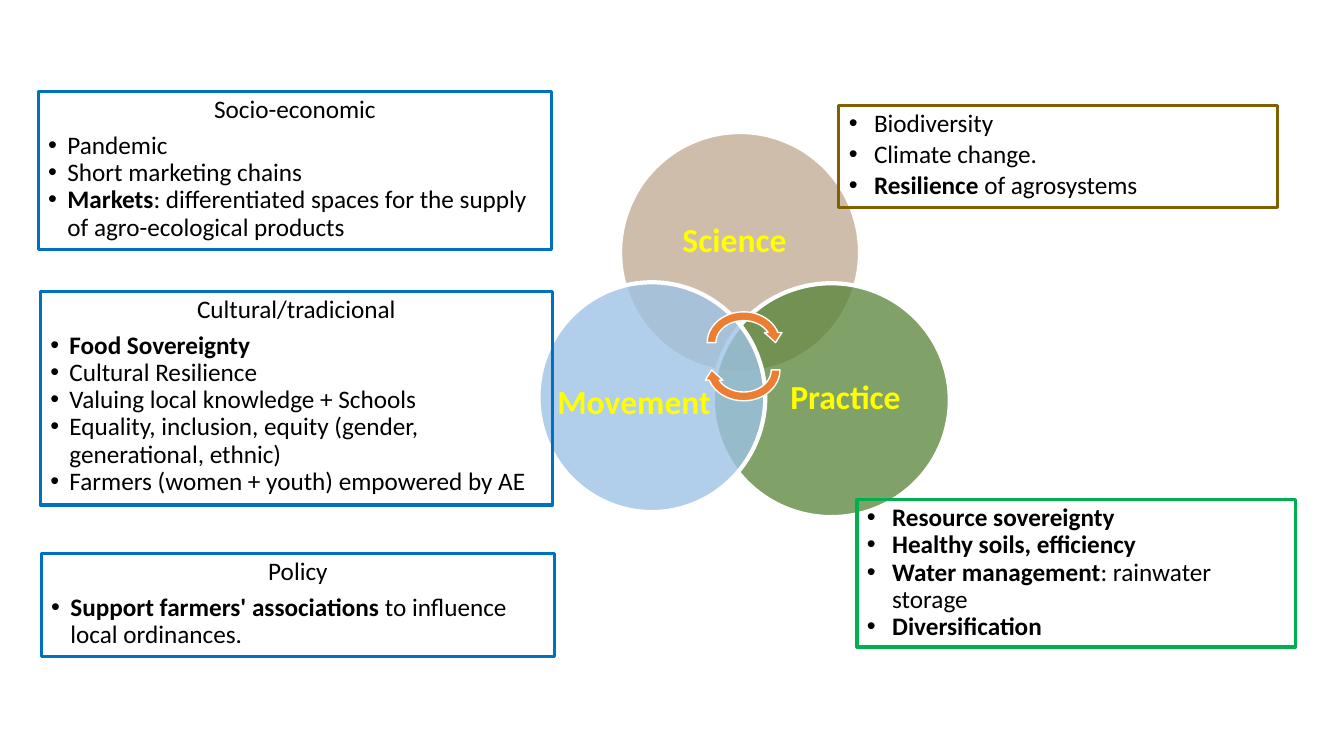
import pptx
import pptx.util
import pptx.dml.color
import pptx.enum.shapes
import pptx.enum.text
import pptx.oxml
import pptx.oxml.ns
import lxml.etree

Inches = pptx.util.Inches
Pt = pptx.util.Pt
SHAPES = pptx.enum.shapes.MSO_SHAPE
FIT = pptx.enum.text.MSO_AUTO_SIZE.SHAPE_TO_FIT_TEXT

# Content
COLOURS = {
    "science": "A2825E", "practice": "548235", "movement": "9DC3E6",
    "label": "FFFF00", "outline": "FFFFFF", "arrow": "ED7D31", "text": "000000",
    "society": "0070C0", "soils": "00B050", "nature": "806000",
}

# Circle: label, colour, opacity in percent, circle place, label place
CIRCLES = [
    ("Science", "science", 52, (6.15, 1.31, 2.38, 2.39), (6.67, 2.12, 1.25, 0.5)),
    ("Practice", "practice", 74, (7.07, 2.81, 2.35, 2.32), (7.74, 3.68, 1.31, 0.5)),
    ("Movement", "movement", 79, (5.34, 2.8, 2.25, 2.28), (5.43, 3.73, 1.74, 0.5)),
]
CYCLE_ARROWS = [((6.97, 3.05, 0.81, 0.7), 0), ((6.97, 3.32, 0.81, 0.7), 180)]

# Panels: each bullet is a list of (words, bold)
PANELS = [
    {"place": (0.38, 0.91, 5.09, 1.57), "colour": "society", "indent": 0.19, "after": 0,
     "heading": "Socio-economic",
     "bullets": [
         [("Pandemic", False)],
         [("Short marketing chains", False)],
         [("Markets", True),
          (": differentiated spaces for the supply of agro-ecological products", False)]]},
    {"place": (0.4, 2.89, 5.08, 2.12), "colour": "society", "indent": 0.19, "after": 0,
     "heading": "Cultural/tradicional",
     "bullets": [
         [("Food Sovereignty", True)],
         [("Cultural Resilience", False)],
         [("Valuing local knowledge + Schools", False)],
         [("Equality, inclusion, equity (gender, generational, ethnic)", False)],
         [("Farmers (women + youth) empowered by AE", False)]]},
    {"place": (0.41, 5.49, 5.09, 1.02), "colour": "society", "indent": 0.19, "after": 0,
     "heading": "Policy",
     "bullets": [
         [("Support farmers' associations ", True),
          ("to influence local ordinances.", False)]]},
    {"place": (8.5, 4.96, 4.35, 1.46), "colour": "soils", "indent": 0.25, "after": 0,
     "heading": None,
     "bullets": [
         [("Resource sovereignty", True)],
         [("Healthy soils, efficiency", True)],
         [("Water management", True), (": rainwater storage", False)],
         [("Diversification", True)]]},
    {"place": (8.32, 1.05, 4.35, 1.01), "colour": "nature", "indent": 0.25, "after": 2.7,
     "heading": None,
     "bullets": [
         [("Biodiversity", False)],
         [("Climate change.", False)],
         [("Resilience ", True), ("of agrosystems", False)]]},
]
HEADING_AFTER = 6.3


def rgb(name):
    return pptx.dml.color.RGBColor.from_string(COLOURS[name])


def apply(target, values):
    for name, value in values.items():
        setattr(target, name, value)


def outline(part, colour, width):
    part.line.color.rgb = rgb(colour)
    part.line.width = Pt(width)


def add_words(paragraph, words, size, colour, bold):
    run = paragraph.add_run()
    run.text = words
    apply(run.font, {"name": "Calibri", "size": Pt(size), "bold": bold})
    run.font.color.rgb = rgb(colour)


def add_solid(shapes, kind, place, colour, width):
    solid = shapes.add_shape(kind, *map(Inches, place))
    solid.shadow.inherit = False
    solid.fill.solid()
    solid.fill.fore_color.rgb = rgb(colour)
    outline(solid, "outline", width)
    return solid


def set_opacity(solid, percent):
    colour = solid.fill._xPr.find(".//" + pptx.oxml.ns.qn("a:srgbClr"))
    alpha = lxml.etree.SubElement(colour, pptx.oxml.ns.qn("a:alpha"))
    alpha.set("val", str(percent * 1000))


def set_bullet(paragraph, indent):
    properties = paragraph._p.get_or_add_pPr()
    properties.set("marL", str(Inches(indent)))
    properties.set("indent", str(-Inches(indent)))
    for tag, key, value in (("a:buFont", "typeface", "Arial"), ("a:buChar", "char", "•")):
        lxml.etree.SubElement(properties, pptx.oxml.ns.qn(tag)).set(key, value)


def add_panel(shapes, panel):
    box = shapes.add_textbox(*map(Inches, panel["place"]))
    outline(box, panel["colour"], 2.25)
    frame = box.text_frame
    apply(frame, {"word_wrap": True, "auto_size": FIT})
    paragraph = frame.paragraphs[0]
    if panel["heading"]:
        apply(paragraph, {"alignment": pptx.enum.text.PP_ALIGN.CENTER,
                          "line_spacing": 0.9, "space_after": Pt(HEADING_AFTER)})
        add_words(paragraph, panel["heading"], 18, "text", False)
        paragraph = frame.add_paragraph()
    for number, bullet in enumerate(panel["bullets"]):
        if number:
            paragraph = frame.add_paragraph()
        apply(paragraph, {"line_spacing": 0.9, "space_after": Pt(panel["after"])})
        set_bullet(paragraph, panel["indent"])
        for words, bold in bullet:
            add_words(paragraph, words, 18, "text", bold)


def main():
    deck = pptx.Presentation()
    apply(deck, {"slide_width": Inches(13.33), "slide_height": Inches(7.5)})
    slide = deck.slides.add_slide(deck.slide_layouts[6])

    # Overlapping circles with labels
    diagram = slide.shapes.add_group_shape().shapes
    for name, colour, opacity, place, label_place in CIRCLES:
        circle = add_solid(diagram, SHAPES.OVAL, place, colour, 3)
        set_opacity(circle, opacity)
        label = diagram.add_textbox(*map(Inches, label_place)).text_frame
        apply(label, {"word_wrap": False, "auto_size": FIT})
        add_words(label.paragraphs[0], name, 24, "label", True)

    # Cycle in the middle
    for place, turn in CYCLE_ARROWS:
        add_solid(diagram, SHAPES.CIRCULAR_ARROW, place, "arrow", 1).rotation = turn

    # Text panels
    for panel in PANELS:
        add_panel(slide.shapes, panel)

    deck.save("out.pptx")


if __name__ == "__main__":
    main()
